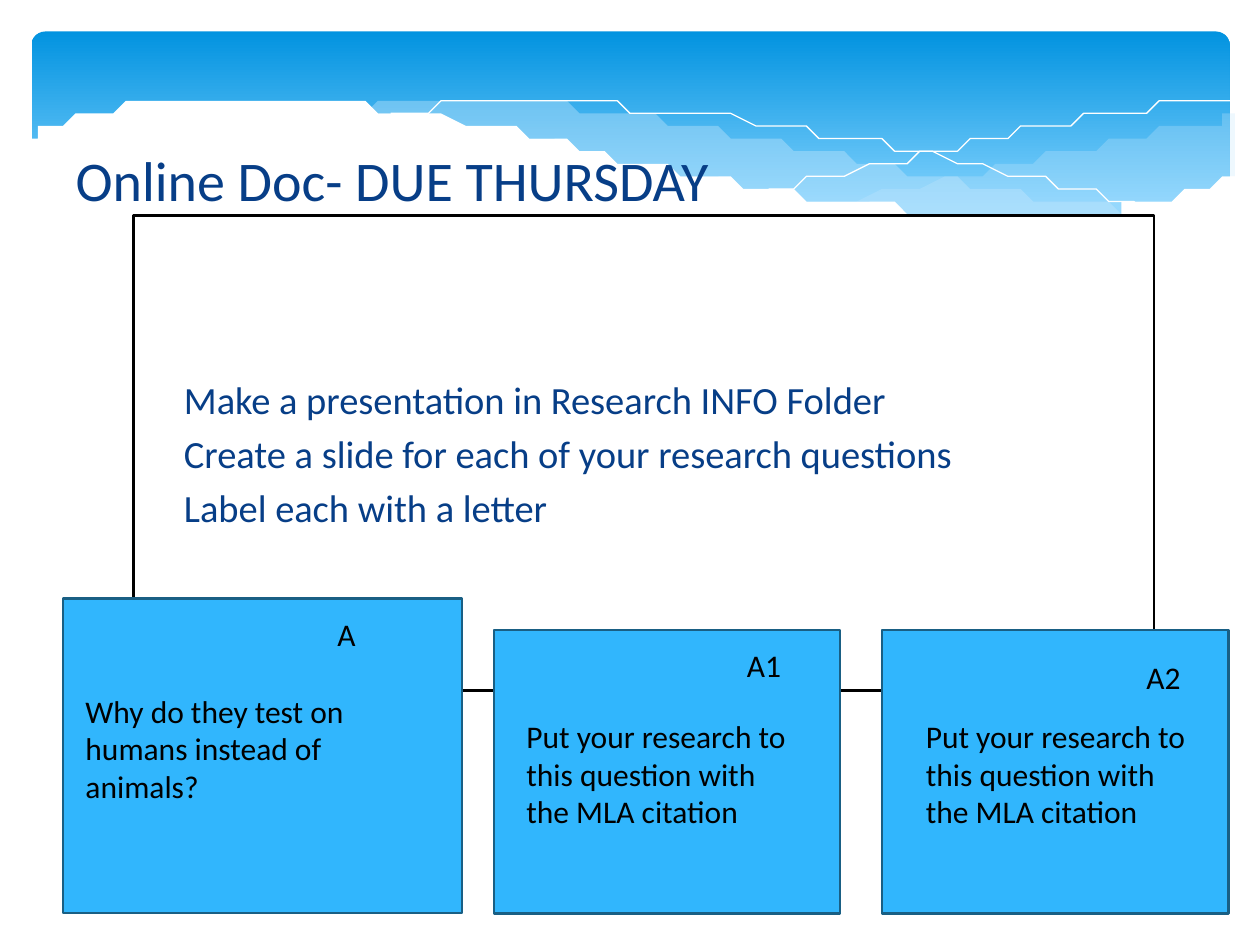
from dataclasses import dataclass

from lxml import etree
from pptx import Presentation
from pptx.dml.color import RGBColor
from pptx.enum.shapes import MSO_SHAPE
from pptx.enum.text import MSO_ANCHOR, MSO_AUTO_SIZE, PP_ALIGN
from pptx.oxml.ns import qn
from pptx.util import Inches, Pt

RECTANGLE, ROUNDED = MSO_SHAPE.RECTANGLE, MSO_SHAPE.ROUNDED_RECTANGLE
TOP, MIDDLE, BOTTOM = MSO_ANCHOR.TOP, MSO_ANCHOR.MIDDLE, MSO_ANCHOR.BOTTOM
LEFT = PP_ALIGN.LEFT
NO_FIT = MSO_AUTO_SIZE.NONE
COLUMNS, ROWS = 100, 75
CELL = Inches(0.1)


@dataclass(frozen=True)
class Theme:
    font: str = "Calibri"
    title_size: int = 32
    body_size: int = 22
    card_size: int = 18
    outline: float = 1.25
    navy: str = "073E87"
    black: str = "000000"
    white: str = "FFFFFF"
    sky_top: str = "0293E0"
    sky_bottom: str = "83D3FE"
    mist: str = "C6E7FC"
    card: str = "31B6FD"
    card_edge: str = "195F84"


def color(value):
    return RGBColor.from_string(value)


def cells(*values):
    return [round(value * CELL) for value in values]


def curve(*knots, steps=8):
    """Sample a Catmull-Rom spline that passes through the knots."""
    padded = [knots[0], *knots, knots[-1]]
    points = []
    for before, start, end, after in zip(padded, padded[1:], padded[2:], padded[3:]):
        for step in range(steps):
            t = step / steps
            points.append(tuple(
                b + ((c - a) * t + (2 * a - 5 * b + 4 * c - d) * t**2
                     + (3 * b - a - 3 * c + d) * t**3) / 2
                for a, b, c, d in zip(before, start, end, after)))
    return points + [knots[-1]]


class SlideBuilder:
    def __init__(self, page, theme):
        self.page, self.theme = page, theme

    def paint(self, shape, fill=None, line=None, width=0):
        if fill:
            shape.fill.solid()
            shape.fill.fore_color.rgb = color(fill)
        else:
            shape.fill.background()
        if line:
            shape.line.color.rgb = color(line)
            shape.line.width = Pt(width)
        else:
            shape.line.fill.background()

    def block(self, place, fill=None, line=None, kind=RECTANGLE):
        shape = self.page.shapes.add_shape(kind, *cells(*place))
        shape.shadow.inherit = False
        self.paint(shape, fill, line, self.theme.outline)
        return shape

    def sky(self, place):
        shape = self.block(place, kind=ROUNDED)
        shape.adjustments[0] = 0.07
        shape.fill.gradient()
        shape.fill.gradient_angle = 270
        first, last = shape.fill.gradient_stops
        first.color.rgb, first.position = color(self.theme.sky_top), 0
        last.color.rgb, last.position = color(self.theme.sky_bottom), 0.9

    def wave(self, points, fill=None, line=None, opacity=100):
        builder = self.page.shapes.build_freeform(*points[0], scale=CELL)
        builder.add_line_segments(points[1:], close=fill is not None)
        shape = builder.convert_to_shape()
        shape.shadow.inherit = False
        self.paint(shape, fill, line)
        if opacity < 100:
            tint = shape.element.spPr.find(qn("a:solidFill"))[0]
            etree.SubElement(tint, qn("a:alpha")).set("val", str(opacity * 1000))

    def set_text(self, shape, lines, size, ink, anchor=TOP):
        frame = shape.text_frame
        frame.text = "\n".join(lines)
        frame.word_wrap = True
        frame.auto_size = NO_FIT
        frame.vertical_anchor = anchor
        for para in frame.paragraphs:
            para.alignment = LEFT
            for span in para.runs:
                span.font.name = self.theme.font
                span.font.size = Pt(size)
                span.font.color.rgb = color(ink)

    def place_holder(self, holder, place):
        """Move a placeholder to its cells and in front of what is drawn so far."""
        holder.left, holder.top, holder.width, holder.height = cells(*place)
        self.page.shapes.element.append(holder.element)

    def title(self, place, text):
        holder = self.page.shapes.title
        self.place_holder(holder, place)
        self.set_text(holder, [text], self.theme.title_size, self.theme.navy, BOTTOM)

    def body(self, place, lines):
        theme = self.theme
        holder = self.page.placeholders[1]
        self.place_holder(holder, place)
        self.paint(holder, theme.white, theme.black, theme.outline)
        self.set_text(holder, lines, theme.body_size, theme.navy, MIDDLE)
        for para in holder.text_frame.paragraphs:
            para.space_before = Pt(0.2 * theme.body_size)
            properties = para._p.get_or_add_pPr()
            properties.set("marL", str(Inches(0.3)))
            properties.set("indent", "0")
            etree.SubElement(properties, qn("a:buNone"))

    def text(self, place, words):
        box = self.page.shapes.add_textbox(*cells(*place))
        self.set_text(box, [words], self.theme.card_size, self.theme.black)

    def card(self, place, label, label_at, words, words_at):
        self.block(place, self.theme.card, self.theme.card_edge)
        self.text((*label_at, 5.8, 4), label)
        self.text(words_at, words)


def draw_banner(slide):
    theme = slide.theme
    slide.sky((2.5, 2.5, 95.1, 15.6))
    slide.wave(
        curve((97.7, 9.4), (92.2, 10.4), (86.2, 11.8), (78, 13.7), (66.2, 16))
        + curve((66.2, 16), (73.3, 16.9), (80.4, 17.2), (87.3, 16.9),
                (92.9, 15.8), (97.7, 14.2)),
        fill=theme.mist, opacity=29)
    slide.wave(
        curve((89.4, 16.7), (80.8, 15.4), (70.7, 13.4), (63, 11.6), (55.5, 10),
              (46.5, 8.6), (38, 8), (32.8, 8.1), (28.7, 8.6))
        + curve((28.7, 8.6), (36.3, 9.7), (45, 11.6), (56.7, 14.3), (66.6, 16.1),
                (74.9, 17), (81.9, 17.3), (89.4, 16.7)),
        fill=theme.mist, opacity=40)
    slide.wave(
        curve((31, 9), (36.3, 8.3), (43.3, 8.2), (51.1, 8.6), (60.9, 9.8),
              (72.8, 12), (83.2, 14.5), (90.8, 16.6)), line=theme.white)
    slide.wave(
        curve((61.4, 15.1), (69.6, 13), (77.7, 11.1), (86.7, 9.3), (92.5, 8.4),
              (97.6, 8)), line=theme.white)
    slide.wave(
        curve((97.7, 14.1), (92, 15.9), (86.3, 16.9), (79.3, 17.1), (70.8, 16.5),
              (60.3, 14.9), (50.3, 12.8), (41.8, 10.7), (31.6, 8.8), (23, 7.9),
              (16.1, 7.9), (9.5, 8.5), (5.2, 9.6), (2.3, 10.7))
        + [(2.3, 22.4), (97.7, 22.4)], fill=theme.white)


def main():
    deck = Presentation()
    deck.slide_width, deck.slide_height = COLUMNS * CELL, ROWS * CELL
    slide = SlideBuilder(deck.slides.add_slide(deck.slide_layouts[1]), Theme())

    draw_banner(slide)
    slide.body((10.6, 17.1, 81, 37.7), [
        "Make a presentation in Research INFO Folder",
        "Create a slide for each of your research questions",
        "Label each with a letter",
    ])
    slide.title((5, 3.7, 90, 13.7), "Online Doc- DUE THURSDAY")

    slide.card((5, 47.5, 31.7, 25), "A", (25.8, 48.3),
               "Why do they test on humans instead of animals?", (5.8, 54.4, 29.2, 10))
    answer = "Put your research to this question with the MLA citation"
    for label, left, label_at, words_left in (
        ("A1", 39.2, (58.3, 50.8), 40.8),
        ("A2", 70, (90, 51.7), 72.5),
    ):
        slide.card((left, 50, 27.5, 22.5), label, label_at,
                   answer, (words_left, 56.4, 23.3, 13.1))

    deck.save("out.pptx")


if __name__ == "__main__":
    main()
